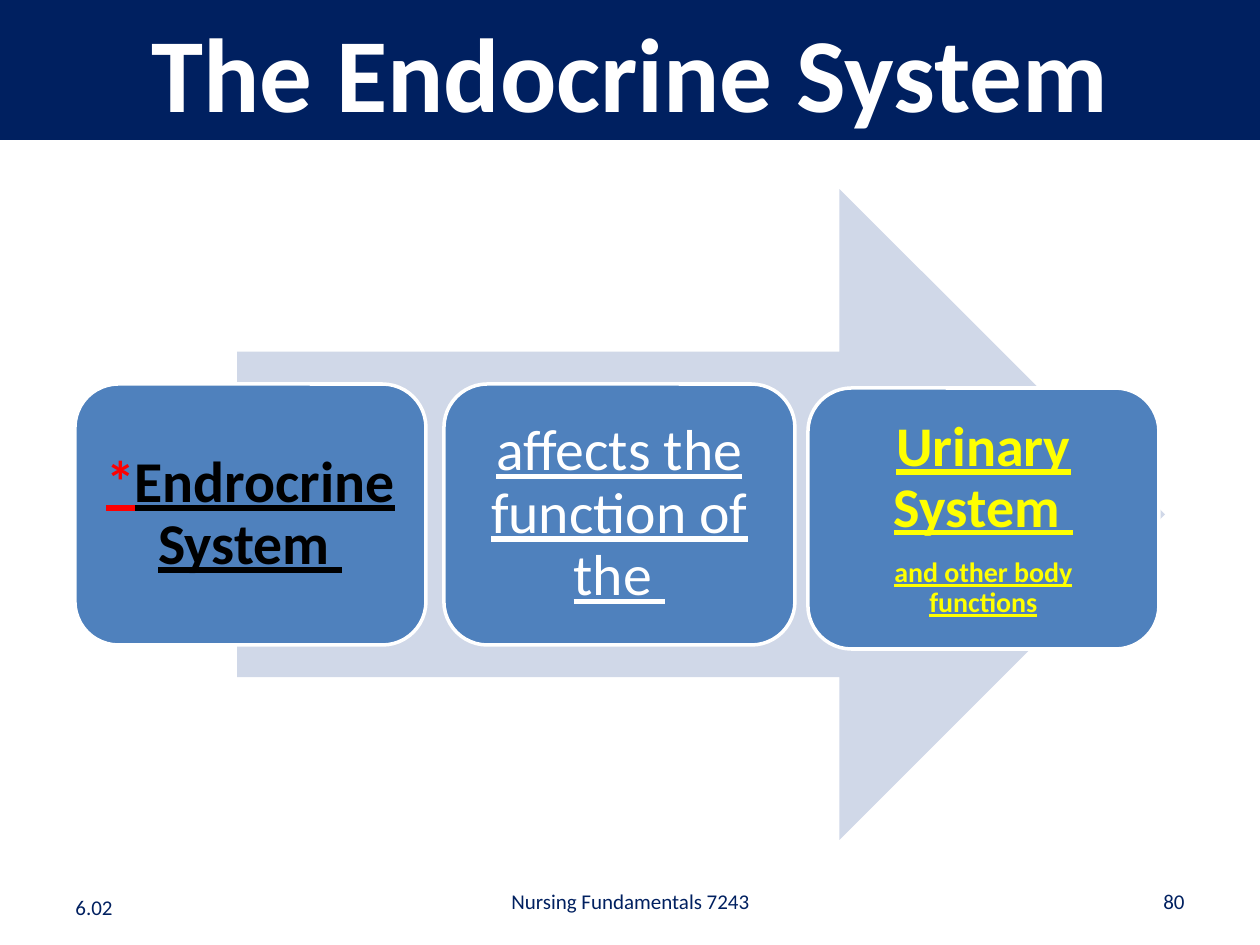
"""Build the endocrine system slide: three steps on a wide arrow."""
from dataclasses import dataclass

from pptx import Presentation
from pptx.dml.color import RGBColor
from pptx.enum.shapes import MSO_SHAPE
from pptx.enum.text import MSO_ANCHOR, MSO_AUTO_SIZE, PP_ALIGN
from pptx.shapes.autoshape import Shape
from pptx.slide import Slide
from pptx.text.text import TextFrame
from pptx.util import Emu, Pt

ARROW = MSO_SHAPE.RIGHT_ARROW
ROUND = MSO_SHAPE.ROUNDED_RECTANGLE
MIDDLE = MSO_ANCHOR.MIDDLE
FIXED = MSO_AUTO_SIZE.NONE
LEFT, CENTER, RIGHT = PP_ALIGN.LEFT, PP_ALIGN.CENTER, PP_ALIGN.RIGHT
SCALE = 914400 / 126


@dataclass(frozen=True)
class Theme:
    font: str = "Calibri"
    navy: str = "002060"
    blue: str = "4F81BD"
    pale: str = "D0D8E8"
    white: str = "FFFFFF"
    black: str = "000000"
    red: str = "FF0000"
    yellow: str = "FFFF00"
    title: int = 60
    step: int = 33
    goal: int = 32
    sub: int = 16
    foot: int = 12


THEME = Theme()


@dataclass(frozen=True)
class Run:
    text: str
    size: int
    color: str
    bold: bool = False
    under: bool = False


@dataclass(frozen=True)
class Box:
    left: int
    top: int
    width: int
    height: int


@dataclass(frozen=True)
class Step:
    box: Box
    inset: int
    paras: list[list[Run]]


@dataclass(frozen=True)
class Note:
    box: Box
    text: str
    align: PP_ALIGN


STEPS = [
    Step(Box(75, 384, 351, 261), 18, [[
        Run("*", THEME.step, THEME.red, True, True),
        Run("Endrocrine System ", THEME.step, THEME.black, True, True)]]),
    Step(Box(444, 384, 351, 261), 18, [[
        Run("affects the function of the ", THEME.step, THEME.white, under=True)]]),
    Step(Box(808, 388, 351, 261), 17, [
        [Run("Urinary System ", THEME.goal, THEME.yellow, True, True)],
        [Run("and other body functions", THEME.sub, THEME.yellow, True, True)]]),
]

NOTES = [
    Note(Box(63, 882, 294, 50), "6.02", LEFT),
    Note(Box(431, 876, 399, 50), "Nursing Fundamentals 7243", CENTER),
    Note(Box(903, 876, 294, 50), "80", RIGHT),
]


def px(num: int) -> Emu:
    """Turn pixels into EMU."""
    return Emu(round(num * SCALE))


def place(box: Box) -> tuple[Emu, Emu, Emu, Emu]:
    """Give the four lengths of a box."""
    return px(box.left), px(box.top), px(box.width), px(box.height)


def paint(shape: Shape, color: str) -> None:
    """Fill a shape with one colour."""
    shape.fill.solid()
    shape.fill.fore_color.rgb = RGBColor.from_string(color)


def write(frame: TextFrame, paras: list[list[Run]], align: PP_ALIGN,
          lead: float = 1.0, after: int = 0) -> None:
    """Write paragraphs run by run."""
    frame.word_wrap = True
    frame.auto_size = FIXED
    frame.vertical_anchor = MIDDLE
    for num, runs in enumerate(paras):
        para = frame.add_paragraph() if num else frame.paragraphs[0]
        para.alignment = align
        para.line_spacing = lead
        para.space_before = Pt(0)
        para.space_after = Pt(after)
        for item in runs:
            run = para.add_run()
            run.text = item.text
            font = run.font
            font.name = THEME.font
            font.size = Pt(item.size)
            font.bold = item.bold
            font.underline = item.under
            font.color.rgb = RGBColor.from_string(item.color)


def head(slide: Slide, text: str) -> None:
    """Fill and place the title band."""
    title = slide.shapes.title
    title.left, title.top, title.width, title.height = place(Box(0, 0, 1260, 140))
    paint(title, THEME.navy)
    write(title.text_frame, [[Run(text, THEME.title, THEME.white, True)]], CENTER)


def arrow(slide: Slide, box: Box) -> None:
    """Draw the arrow behind the steps."""
    shape = slide.shapes.add_shape(ARROW, *place(box))
    shape.shadow.inherit = False
    paint(shape, THEME.pale)
    shape.line.fill.background()


def card(slide: Slide, step: Step) -> None:
    """Draw one step with its text."""
    shape = slide.shapes.add_shape(ROUND, *place(step.box))
    shape.shadow.inherit = False
    paint(shape, THEME.blue)
    shape.line.color.rgb = RGBColor.from_string(THEME.white)
    shape.line.width = Pt(2)
    frame = shape.text_frame
    frame.margin_left = frame.margin_right = px(step.inset)
    frame.margin_top = frame.margin_bottom = px(step.inset)
    write(frame, step.paras, CENTER, 0.9, 11)


def foot(slide: Slide, note: Note) -> None:
    """Add one footer text."""
    frame = slide.shapes.add_textbox(*place(note.box)).text_frame
    write(frame, [[Run(note.text, THEME.foot, THEME.navy)]], note.align)


def main() -> None:
    """Build and save the slide."""
    deck = Presentation()
    deck.slide_width, deck.slide_height = px(1260), px(945)
    slide = deck.slides.add_slide(deck.slide_layouts[5])
    head(slide, "The Endocrine System")
    arrow(slide, Box(237, 189, 928, 651))
    for step in STEPS:
        card(slide, step)
    for note in NOTES:
        foot(slide, note)
    deck.save("out.pptx")


if __name__ == "__main__":
    main()
